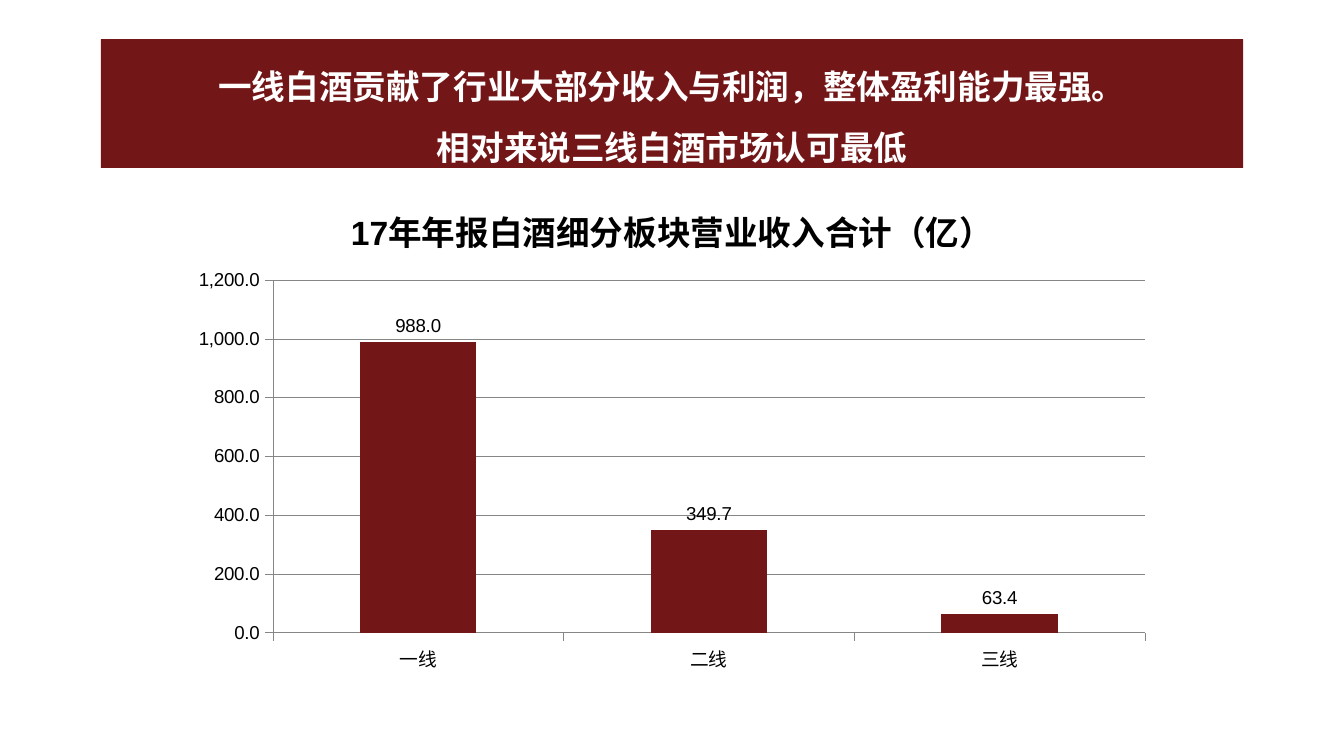
from lxml import etree
from pptx import Presentation
from pptx.chart.data import CategoryChartData
from pptx.dml.color import RGBColor
from pptx.enum.chart import XL_CHART_TYPE, XL_LABEL_POSITION, XL_TICK_MARK
from pptx.enum.text import MSO_ANCHOR, MSO_AUTO_SIZE, PP_ALIGN
from pptx.oxml.ns import qn
from pptx.util import Pt

PX = 9525  # 96 px to the inch
TITLE_ONLY = 5
COLUMNS = XL_CHART_TYPE.COLUMN_CLUSTERED
ABOVE_BAR = XL_LABEL_POSITION.OUTSIDE_END
TICK_OUT = XL_TICK_MARK.OUTSIDE
TOP = MSO_ANCHOR.TOP
NO_FIT = MSO_AUTO_SIZE.NONE
CENTER = PP_ALIGN.CENTER

FONT = "Arial"
COLORS = {"wine": "731618", "white": "FFFFFF", "black": "000000", "grid": "868686"}
NUMBER_FORMAT = "#,##0.0"

SLIDE_SIZE = (960, 540)
BANNER_BOX = (72, 28, 816, 92)
CHART_BOX = (128, 128, 704, 360)
PLOT_AREA = {"x": 0.095, "y": 0.2, "w": 0.885, "h": 0.7}  # shares of the chart box
PLOT_AREA = {side: round(share, 3) for side, share in PLOT_AREA.items()}

HEADLINES = [
    "一线白酒贡献了行业大部分收入与利润，整体盈利能力最强。",
    "相对来说三线白酒市场认可最低",
]
CHART_TITLE = "17年年报白酒细分板块营业收入合计（亿）"
REVENUE = {"一线": 988, "二线": 349.7, "三线": 63.4}


def rgb(name):
    return RGBColor.from_string(COLORS[name])


def emu(lengths):
    return [length * PX for length in lengths]


def style_font(font, size, color, bold=False):
    font.name = FONT
    font.size = Pt(size)
    font.bold = bold
    font.color.rgb = rgb(color)


def style_line(line):
    line.color.rgb = rgb("grid")
    line.width = Pt(0.25)


def add_banner(slide, box):
    banner = slide.shapes.title
    banner.left, banner.top, banner.width, banner.height = emu(box)
    banner.fill.solid()
    banner.fill.fore_color.rgb = rgb("wine")
    frame = banner.text_frame
    frame.word_wrap = True
    frame.auto_size = NO_FIT
    frame.vertical_anchor = TOP
    for index, headline in enumerate(HEADLINES):
        paragraph = frame.add_paragraph() if index else frame.paragraphs[0]
        paragraph.alignment = CENTER
        paragraph.line_spacing = 1.5
        run = paragraph.add_run()
        run.text = headline
        style_font(run.font, 18, "white", bold=True)


def fix_plot_area(chart):
    """Pin the inner plot area to its shares of the chart box."""
    plot_area = chart._chartSpace.chart.plotArea
    for old_layout in plot_area.findall(qn("c:layout")):
        plot_area.remove(old_layout)
    layout = etree.Element(qn("c:layout"))
    manual = etree.SubElement(layout, qn("c:manualLayout"))
    settings = {"layoutTarget": "inner", "xMode": "edge", "yMode": "edge", **PLOT_AREA}
    for tag, value in settings.items():
        etree.SubElement(manual, qn(f"c:{tag}")).set("val", str(value))
    plot_area.insert(0, layout)


def add_revenue_chart(slide, box):
    revenue_data = CategoryChartData(number_format=NUMBER_FORMAT)
    revenue_data.categories = list(REVENUE)
    revenue_data.add_series("Series 1", list(REVENUE.values()))
    chart = slide.shapes.add_chart(COLUMNS, *emu(box), revenue_data).chart
    style_font(chart.font, 10, "black")
    chart.has_legend = False

    chart.has_title = True
    title_run = chart.chart_title.text_frame.paragraphs[0].add_run()
    title_run.text = CHART_TITLE
    style_font(title_run.font, 18, "black", bold=True)
    chart.chart_title.include_in_layout = False

    revenue_axis = chart.value_axis
    for axis in (chart.category_axis, revenue_axis):
        axis.major_tick_mark = TICK_OUT
        style_line(axis.format.line)
    revenue_axis.minimum_scale = 0
    revenue_axis.maximum_scale = 1200
    revenue_axis.major_unit = 200
    revenue_axis.tick_labels.number_format = NUMBER_FORMAT
    revenue_axis.tick_labels.number_format_is_linked = False
    revenue_axis.has_major_gridlines = True
    style_line(revenue_axis.major_gridlines.format.line)

    bars = chart.plots[0]
    bars.gap_width = 150
    bars.vary_by_categories = False
    bars.series[0].format.fill.solid()
    bars.series[0].format.fill.fore_color.rgb = rgb("wine")
    labels = bars.series[0].data_labels
    labels.show_value = True
    labels.number_format = NUMBER_FORMAT
    labels.number_format_is_linked = False
    labels.position = ABOVE_BAR
    style_font(labels.font, 10, "black")
    fix_plot_area(chart)


def main():
    deck = Presentation()
    deck.slide_width, deck.slide_height = emu(SLIDE_SIZE)
    slide = deck.slides.add_slide(deck.slide_layouts[TITLE_ONLY])
    add_banner(slide, BANNER_BOX)
    add_revenue_chart(slide, CHART_BOX)
    deck.save("out.pptx")


if __name__ == "__main__":
    main()
